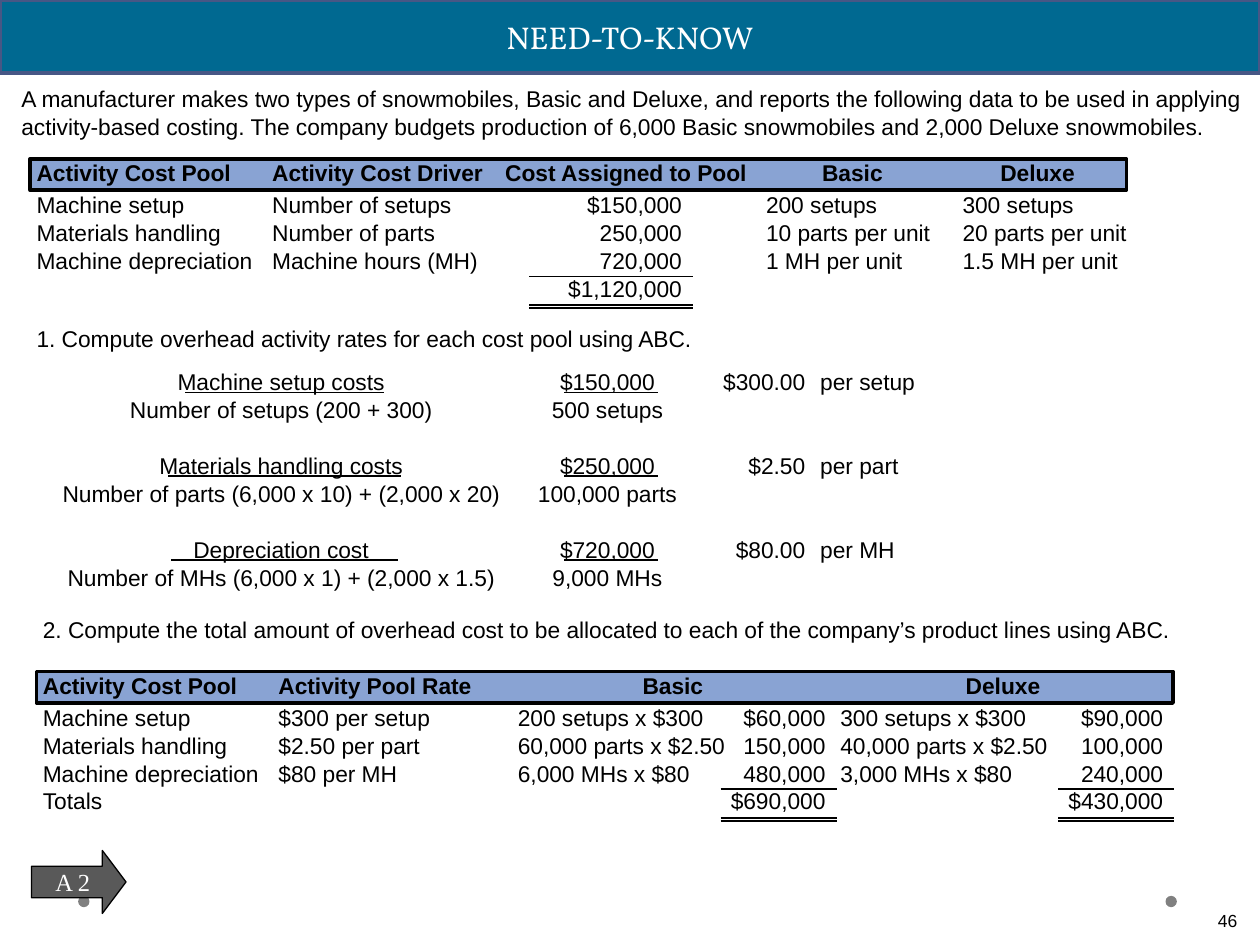
from itertools import accumulate
from lxml import etree
from pptx import Presentation
from pptx.dml.color import RGBColor
from pptx.enum.shapes import MSO_CONNECTOR, MSO_SHAPE
from pptx.enum.text import MSO_ANCHOR, PP_ALIGN
from pptx.oxml.ns import qn
from pptx.util import Inches, Pt

RECTANGLE, ELLIPSE, ARROW = MSO_SHAPE.RECTANGLE, MSO_SHAPE.OVAL, MSO_SHAPE.RIGHT_ARROW
STRAIGHT = MSO_CONNECTOR.STRAIGHT
MIDDLE, TOP = MSO_ANCHOR.MIDDLE, MSO_ANCHOR.TOP
LEFT, CENTER, RIGHT = PP_ALIGN.LEFT, PP_ALIGN.CENTER, PP_ALIGN.RIGHT

WIDTH, HEIGHT = Inches(10), Inches(7.5)
COL, ROW = WIDTH / 100, HEIGHT / 75
LINE, HEAD = 2.22, 2.5
PLAIN_TABLE = "{2D5ABB26-0587-4C30-8999-92F81FD0307C}"
COLORS = {
    "banner": "006991", "banner_edge": "475785", "header": "89A3D3",
    "ink": "000000", "paper": "FFFFFF", "dot": "808080", "arrow": "595959",
}


def color(name):
    return RGBColor.from_string(COLORS[name])


def cols(count):
    return round(count * COL)


def rows(count):
    return round(count * ROW)


def place(x, y, w, h):
    return cols(x), rows(y), cols(w), rows(h)


def write(frame, text, align=LEFT, size=13, font="Arial", ink="ink", bold=False):
    paragraph = frame.paragraphs[0]
    paragraph.alignment = align
    run = paragraph.add_run()
    run.text = text
    run.font.size = Pt(size)
    run.font.name = font
    run.font.bold = bold
    run.font.color.rgb = color(ink)


def set_margins(holder, left=0, right=0):
    holder.margin_left, holder.margin_right = cols(left), cols(right)
    holder.margin_top = holder.margin_bottom = 0


def add_label(slide, box, text, align=LEFT, **style):
    frame = slide.shapes.add_textbox(*place(*box)).text_frame
    frame.word_wrap = True
    set_margins(frame)
    write(frame, text, align, **style)
    return frame


def add_block(slide, preset, box, fill, edge=None, weight=1):
    block = slide.shapes.add_shape(preset, *place(*box))
    block.shadow.inherit = False
    paint(block, fill, edge, weight)
    return block


def paint(block, fill, edge, weight):
    block.fill.solid()
    block.fill.fore_color.rgb = color(fill)
    if edge:
        block.line.color.rgb = color(edge)
        block.line.width = Pt(weight)
    else:
        block.line.fill.background()


def add_rule(slide, x, y, length):
    rule = slide.shapes.add_connector(STRAIGHT, cols(x), rows(y), cols(x + length), rows(y))
    rule.line.color.rgb = color("ink")
    rule.line.width = Pt(1)
    etree.SubElement(rule._element.spPr, qn("a:effectLst"))


def add_banner(slide, box, text):
    banner = slide.shapes.title
    banner.left, banner.top, banner.width, banner.height = place(*box)
    paint(banner, "banner", "banner_edge", 2.25)
    banner.text_frame.vertical_anchor = MIDDLE
    write(banner.text_frame, text, CENTER, 18, "Vollkorn", "paper")


def fill_cell(cell, text, align, left, right, bold=False):
    cell.fill.background()
    cell.vertical_anchor = TOP
    set_margins(cell, left, right)
    if text:
        write(cell.text_frame, text, align, bold=bold)
    else:
        etree.SubElement(cell.text_frame.paragraphs[0]._p, qn("a:endParaRPr"), sz="1300")


def add_cost_table(slide, box, columns, headings, records, totals):
    x, y, width, height = box
    add_block(slide, RECTANGLE, box, "header", "ink", 2)
    widths = [column[0] for column in columns]
    table_box = place(x, y + 0.2, sum(widths), HEAD + LINE * len(records))
    graphic = slide.shapes.add_table(len(records) + 1, len(columns), *table_box)
    graphic._element.find(".//" + qn("a:tableStyleId")).text = PLAIN_TABLE
    table = graphic.table
    table.first_row = table.horz_banding = False
    for column, span in zip(table.columns, widths):
        column.width = cols(span)
    for index, line in enumerate(table.rows):
        line.height = rows(LINE if index else HEAD)

    for index, (text, align, left) in enumerate(headings):
        fill_cell(table.cell(0, index), text, align, left, 0, bold=True)
        if index and not text:
            table.cell(0, index - 1).merge(table.cell(0, index))
    for r, record in enumerate(records, 1):
        for c, (text, (_, align, left, right)) in enumerate(zip(record, columns)):
            fill_cell(table.cell(r, c), text, align, left, right)

    bottom = y + 0.2 + HEAD + LINE * len(records)
    for offset, length in totals:
        for level in (bottom - LINE - 0.02, bottom + 0.05, bottom + 0.25):
            add_rule(slide, x + offset, level, length)


def add_rate(slide, box, driver, amount, rate, unit):
    x, y, width, height = box
    for center, span, (upper, lower, line) in ((17.4, 37, driver), (43.3, 15, amount)):
        for row, text in enumerate((upper, lower)):
            add_label(slide, (x + center - span / 2, y + row * LINE, span, height / 2), text, CENTER)
        add_rule(slide, x + center + 0.3 - line / 2, y + 1.95, line)
    add_label(slide, (x + 50, y, 9, LINE), rate, RIGHT)
    add_label(slide, (x + 60.2, y, width - 60.2, LINE), unit)


def add_rates(slide, box, rates):
    x, y, width, height = box
    pitch = height / len(rates)
    for index, rate in enumerate(rates):
        add_rate(slide, (x, y + index * pitch, width, 2 * LINE), *rate)


def add_footer(slide, box):
    x, y, width, height = box
    for dot_x in (6.2, 92.5):
        add_block(slide, ELLIPSE, (dot_x, y + 3.6, 0.9, 0.9), "dot")
    arrow = add_block(slide, ARROW, (x, y, 7.5, 5), "arrow", "ink", 0.75)
    arrow.adjustments[0], arrow.adjustments[1] = 0.5, 0.375
    arrow.text_frame.word_wrap = False
    arrow.text_frame.vertical_anchor = MIDDLE
    write(arrow.text_frame, "A 2", CENTER, 14, "Times New Roman", "paper")
    add_label(slide, (x + width - 5.8, y + 4.7, 5, 2), "46", RIGHT, size=10)


def main():
    deck = Presentation()
    deck.slide_width, deck.slide_height = WIDTH, HEIGHT
    slide = deck.slides.add_slide(deck.slide_layouts[5])

    add_banner(slide, (0, 0, 100, 5.8), "NEED-TO-KNOW")
    intro = add_label(
        slide, (1.7, 6.7, 97.7, 4.6),
        "A manufacturer makes two types of snowmobiles, Basic and Deluxe, and reports the following "
        "data to be used in applying activity-based costing. The company budgets production of "
        "6,000 Basic snowmobiles and 2,000 Deluxe snowmobiles.")
    intro.paragraphs[0].line_spacing = Pt(16)

    add_cost_table(
        slide, (2.4, 12.6, 87, 2.5),
        [(18.7, LEFT, 0.5, 0), (19, LEFT, 0.5, 0), (20.2, RIGHT, 0, 6.2),
         (14.7, LEFT, 0.5, 0), (14.7, LEFT, 1.4, 0)],
        [("Activity Cost Pool", LEFT, 0.5), ("Activity Cost Driver", LEFT, 0.5),
         ("Cost Assigned to Pool", LEFT, 0), ("Basic", CENTER, 0), ("Deluxe", CENTER, 0)],
        [("Machine setup", "Number of setups", "$150,000", "200 setups", "300 setups"),
         ("Materials handling", "Number of parts", "250,000", "10 parts per unit", "20 parts per unit"),
         ("Machine depreciation", "Machine hours (MH)", "720,000", "1 MH per unit", "1.5 MH per unit"),
         ("", "", "$1,120,000", "", "")],
        [(39.6, 13)])

    add_label(slide, (2.9, 25.8, 60, 2.4),
              "1. Compute overhead activity rates for each cost pool using ABC.")
    add_rates(slide, (4.9, 29.2, 70, 19.95), [
        (("Machine setup costs", "Number of setups (200 + 300)", 15.8),
         ("$150,000", "500 setups", 7.4), "$300.00", "per setup"),
        (("Materials handling costs", "Number of parts (6,000 x 10) + (2,000 x 20)", 18.5),
         ("$250,000", "100,000 parts", 7.4), "$2.50", "per part"),
        (("Depreciation cost", "Number of MHs (6,000 x 1) + (2,000 x 1.5)", 18),
         ("$720,000", "9,000 MHs", 7.4), "$80.00", "per MH"),
    ])

    add_label(slide, (3.4, 48.9, 93, 2.5),
              "2. Compute the total amount of overhead cost to be allocated to each of the "
              "company’s product lines using ABC.")
    allocation = [(18.7, LEFT, 0.5, 0), (19, LEFT, 0.5, 0), (17.1, LEFT, 0.5, 0),
                  (8.5, RIGHT, 0, 0.7), (17.8, LEFT, 0.5, 0), (9, RIGHT, 0, 0.7)]
    edges = list(accumulate(column[0] for column in allocation))
    add_cost_table(
        slide, (2.9, 53.3, 90.2, 2.5), allocation,
        [("Activity Cost Pool", LEFT, 0.5), ("Activity Pool Rate", LEFT, 0.5),
         ("Basic", CENTER, 0), ("", CENTER, 0), ("Deluxe", CENTER, 0), ("", CENTER, 0)],
        [("Machine setup", "$300 per setup", "200 setups x $300", "$60,000",
          "300 setups x $300", "$90,000"),
         ("Materials handling", "$2.50 per part", "60,000 parts x $2.50", "150,000",
          "40,000 parts x $2.50", "100,000"),
         ("Machine depreciation", "$80 per MH", "6,000 MHs x $80", "480,000",
          "3,000 MHs x $80", "240,000"),
         ("Totals", "", "", "$690,000", "", "$430,000")],
        [(edges[3] - 9, 9.2), (edges[5] - 9, 9.2)])

    add_footer(slide, (2.5, 67.5, 96.5, 7.5))
    deck.save("out.pptx")


if __name__ == "__main__":
    main()
